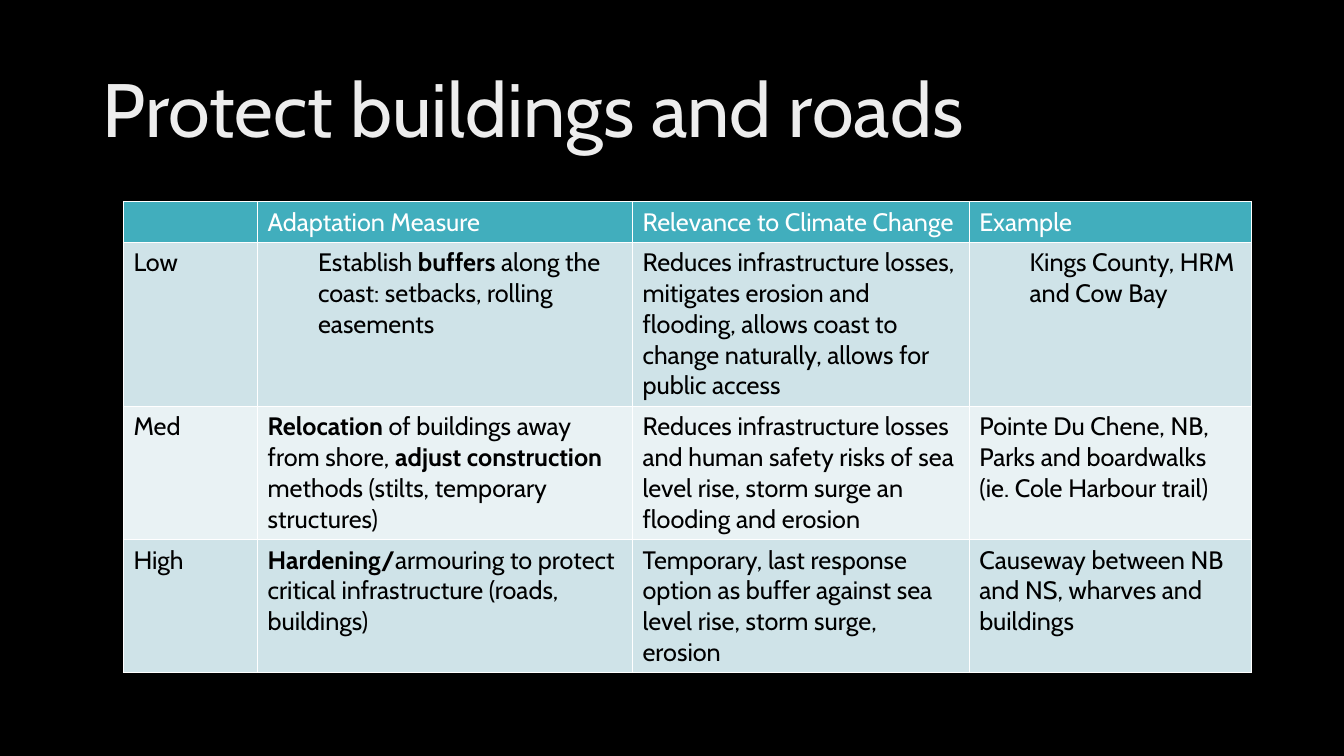
from lxml import etree
from pptx import Presentation
from pptx.dml.color import RGBColor
from pptx.enum.text import MSO_ANCHOR, PP_ALIGN
from pptx.oxml.ns import qn
from pptx.util import Pt

MIDDLE = MSO_ANCHOR.MIDDLE
LEFT = PP_ALIGN.LEFT

BLACK = RGBColor(0x00, 0x00, 0x00)
WHITE = RGBColor(0xFF, 0xFF, 0xFF)
TITLE_GREY = RGBColor(0xED, 0xED, 0xED)
TEAL = RGBColor(0x41, 0xAE, 0xBD)
BAND_DARK = RGBColor(0xCF, 0xE3, 0xE8)
BAND_LIGHT = RGBColor(0xE9, 0xF2, 0xF4)
FONT = "Cabin"

HEADING = "Protect buildings and roads"
BOLD_MARK = "*"
MEASURES = [
    ("", "Adaptation Measure", "Relevance to Climate Change", "Example"),
    (
        "Low",
        "Establish *buffers *along the coast: setbacks, rolling easements",
        "Reduces infrastructure losses, mitigates erosion and flooding, "
        "allows coast to change naturally, allows for public access",
        "Kings County, HRM and Cow Bay",
    ),
    (
        "Med",
        "*Relocation *of buildings away from shore, *adjust construction *"
        "methods (stilts, temporary structures)",
        "Reduces infrastructure losses and human safety risks of sea level "
        "rise, storm surge an flooding and erosion",
        "Pointe Du Chene, NB, Parks and boardwalks (ie. Cole Harbour trail)",
    ),
    (
        "High",
        "*Hardening/*armouring to protect critical infrastructure (roads, buildings)",
        "Temporary, last response option as buffer against sea level rise, "
        "storm surge, erosion",
        "Causeway between NB and NS, wharves and buildings",
    ),
]
INDENTED = {(1, 1), (1, 3)}
COLUMN_WIDTHS = [95.8, 267.8, 240.5, 201.6]
ROW_HEIGHTS = [29.2, 116.8, 95.2, 95.2]
TABLE_LEFT, TABLE_TOP = 88.2, 144


def add_borders(cell):
    properties = cell._tc.get_or_add_tcPr()
    for side in ("a:lnL", "a:lnR", "a:lnT", "a:lnB"):
        line = etree.SubElement(properties, qn(side), w=str(Pt(1)))
        fill = etree.SubElement(line, qn("a:solidFill"))
        etree.SubElement(fill, qn("a:srgbClr"), val=str(WHITE))


def set_font(paragraph, size, color):
    paragraph.font.name = FONT
    paragraph.font.size = Pt(size)
    paragraph.font.color.rgb = color


def fill_cell(cell, text, row, column):
    add_borders(cell)
    cell.fill.solid()
    band = BAND_DARK if row % 2 else BAND_LIGHT
    cell.fill.fore_color.rgb = TEAL if row == 0 else band
    paragraph = cell.text_frame.paragraphs[0]
    if (row, column) in INDENTED:
        paragraph._p.get_or_add_pPr().set("marL", str(Pt(36)))
    set_font(paragraph, 18, WHITE if row == 0 else BLACK)
    for index, part in enumerate(text.split(BOLD_MARK)):
        if part:
            run = paragraph.add_run()
            run.text = part
            run.font.bold = index % 2 == 1


def main():
    deck = Presentation()
    deck.slide_width, deck.slide_height = Pt(960), Pt(540)
    slide = deck.slides.add_slide(deck.slide_layouts[5])
    slide.background.fill.solid()
    slide.background.fill.fore_color.rgb = BLACK

    title = slide.shapes.title
    title.left, title.top, title.width, title.height = Pt(66), Pt(28.8), Pt(828), Pt(104.4)
    title.text_frame.text = HEADING
    title.text_frame.vertical_anchor = MIDDLE
    heading = title.text_frame.paragraphs[0]
    heading.alignment = LEFT
    heading.line_spacing = 0.9
    set_font(heading, 54, TITLE_GREY)

    table = slide.shapes.add_table(
        len(MEASURES), len(COLUMN_WIDTHS), Pt(TABLE_LEFT), Pt(TABLE_TOP),
        Pt(sum(COLUMN_WIDTHS)), Pt(sum(ROW_HEIGHTS)),
    ).table
    for column, width in zip(table.columns, COLUMN_WIDTHS):
        column.width = Pt(width)
    for row, height in zip(table.rows, ROW_HEIGHTS):
        row.height = Pt(height)
    for row, texts in enumerate(MEASURES):
        for column, text in enumerate(texts):
            fill_cell(table.cell(row, column), text, row, column)

    deck.save("out.pptx")


if __name__ == "__main__":
    main()
